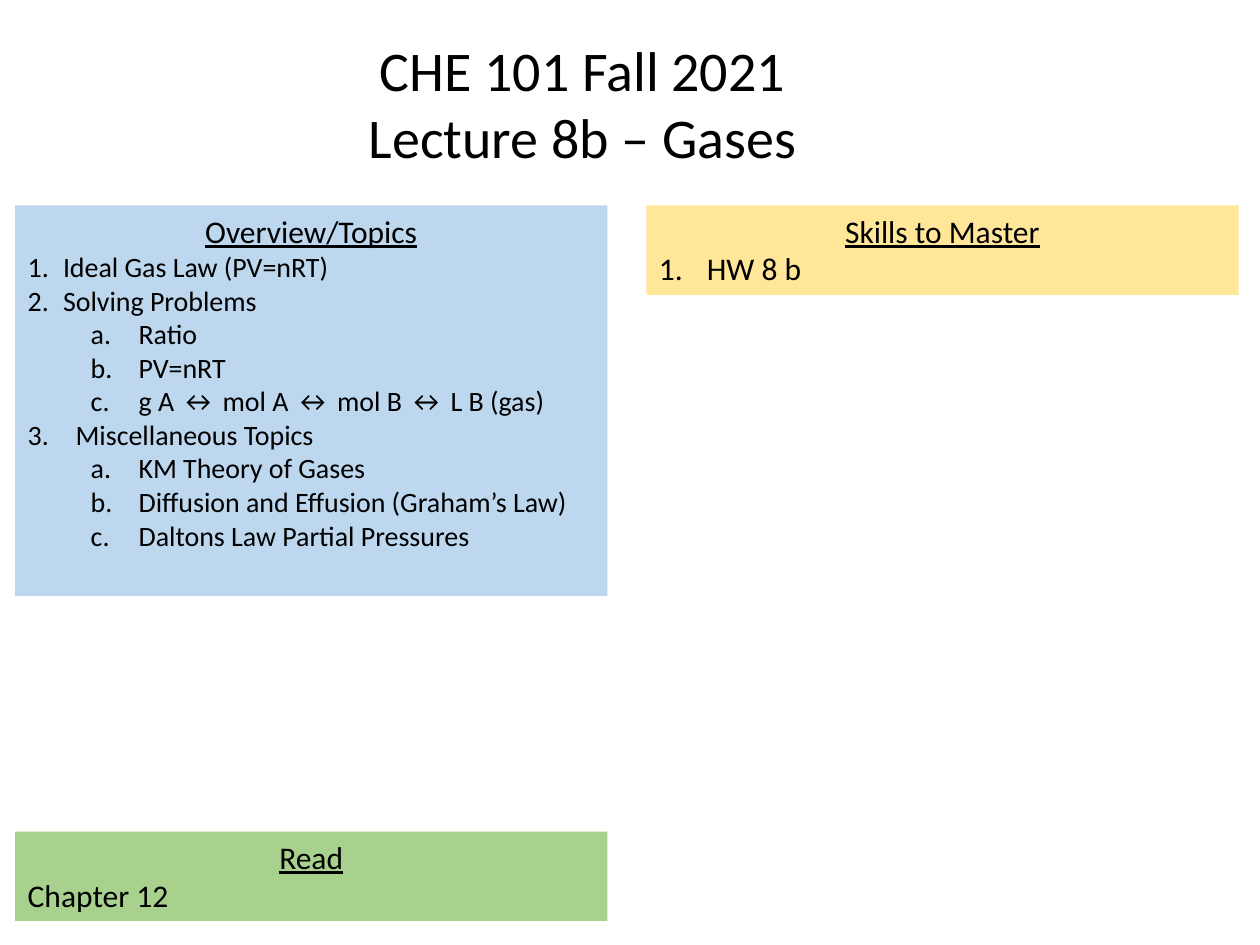
import pptx
import pptx.dml.color
import pptx.enum.text
import pptx.oxml.ns
import pptx.util
from lxml import etree

Inches = pptx.util.Inches
ALIGN = pptx.enum.text.PP_ALIGN
ANCHOR = pptx.enum.text.MSO_ANCHOR
FIT = pptx.enum.text.MSO_AUTO_SIZE

THEME = {
    "font": "Calibri",
    "text": "000000",
    "blue": "BDD7EE",
    "yellow": "FFE699",
    "green": "A9D18E",
    "title": 32,
    "heading": 18,
    "body": 18,
    "topics": 16,
}

TITLE_LINES = ["CHE 101 Fall 2021", "Lecture 8b – Gases"]

LIST_STYLES = {
    "plain": {"level": 0, "margin": 0, "hang": 0, "numbering": None},
    "tight": {"level": 0, "margin": 0.28, "hang": 0.28, "numbering": "arabicPeriod"},
    "wide": {"level": 0, "margin": 0.38, "hang": 0.38, "numbering": "arabicPeriod"},
    "sub": {"level": 1, "margin": 0.88, "hang": 0.38, "numbering": "alphaLcPeriod"},
}

LEFT_COLUMN, RIGHT_COLUMN, PANEL_WIDTH = 0.12, 5.13, 4.7
PANELS = [
    {
        "heading": "Overview/Topics", "fill": "blue", "size": "topics",
        "left": LEFT_COLUMN, "top": 1.63, "height": 3.1,
        "items": [
            ("tight", "Ideal Gas Law (PV=nRT)"),
            ("tight", "Solving Problems"),
            ("sub", "Ratio"),
            ("sub", "PV=nRT"),
            ("sub", "g A ↔ mol A ↔ mol B ↔ L B (gas)"),
            ("wide", "Miscellaneous Topics"),
            ("sub", "KM Theory of Gases"),
            ("sub", "Diffusion and Effusion (Graham’s Law)"),
            ("sub", "Daltons Law Partial Pressures"),
        ],
    },
    {
        "heading": "Skills to Master", "fill": "yellow", "size": "body",
        "left": RIGHT_COLUMN, "top": 1.63, "height": 0.71,
        "items": [("wide", "HW 8 b")],
    },
    {
        "heading": "Read", "fill": "green", "size": "body",
        "left": LEFT_COLUMN, "top": 6.6, "height": 0.71,
        "items": [("plain", "Chapter 12")],
    },
]


def set_values(target, values):
    for name, value in values.items():
        setattr(target, name, value)


def color(name):
    return pptx.dml.color.RGBColor.from_string(THEME[name])


def place(box, left, top, width, height, anchor, wrap):
    set_values(box, {"left": Inches(left), "top": Inches(top),
                     "width": Inches(width), "height": Inches(height)})
    set_values(box.text_frame, {"auto_size": FIT.NONE, "word_wrap": wrap,
                                "vertical_anchor": anchor})


def set_list_style(para, style):
    para.level = style["level"]
    properties = para._p.get_or_add_pPr()
    properties.set("marL", str(Inches(style["margin"])))
    properties.set("indent", str(-Inches(style["hang"])))
    tag = "a:buAutoNum" if style["numbering"] else "a:buNone"
    bullet = etree.SubElement(properties, pptx.oxml.ns.qn(tag))
    if style["numbering"]:
        bullet.set("type", style["numbering"])


def write_line(frame, index, text, size, align, style="plain", underline=False):
    para = frame.paragraphs[0] if index == 0 else frame.add_paragraph()
    set_values(para, {"alignment": align, "line_spacing": 1.0,
                      "space_before": pptx.util.Pt(0),
                      "space_after": pptx.util.Pt(0)})
    set_list_style(para, LIST_STYLES[style])
    span = para.add_run()
    span.text = text
    set_values(span.font, {"name": THEME["font"], "size": pptx.util.Pt(THEME[size]),
                           "bold": False, "underline": underline})
    span.font.color.rgb = color("text")


def fill_panel(box, panel):
    place(box, panel["left"], panel["top"], PANEL_WIDTH, panel["height"],
          ANCHOR.TOP, True)
    box.fill.solid()
    box.fill.fore_color.rgb = color(panel["fill"])
    write_line(box.text_frame, 0, panel["heading"], "heading", ALIGN.CENTER,
               underline=True)
    for index, (style, text) in enumerate(panel["items"], start=1):
        write_line(box.text_frame, index, text, panel["size"], ALIGN.LEFT, style)


def main():
    deck = pptx.Presentation()
    set_values(deck, {"slide_width": Inches(10), "slide_height": Inches(7.5)})
    comparison_layout = deck.slide_layouts[4]
    page = deck.slides.add_slide(comparison_layout)

    title = page.shapes.title
    place(title, 2.81, 0.23, 3.63, 1.18, ANCHOR.TOP, False)
    for index, text in enumerate(TITLE_LINES):
        write_line(title.text_frame, index, text, "title", ALIGN.CENTER)

    bodies = list(page.placeholders)[1:]
    for box, panel in zip(bodies, PANELS):
        fill_panel(box, panel)
    for box in bodies[len(PANELS):]:
        box.element.getparent().remove(box.element)

    deck.save("out.pptx")


if __name__ == "__main__":
    main()
